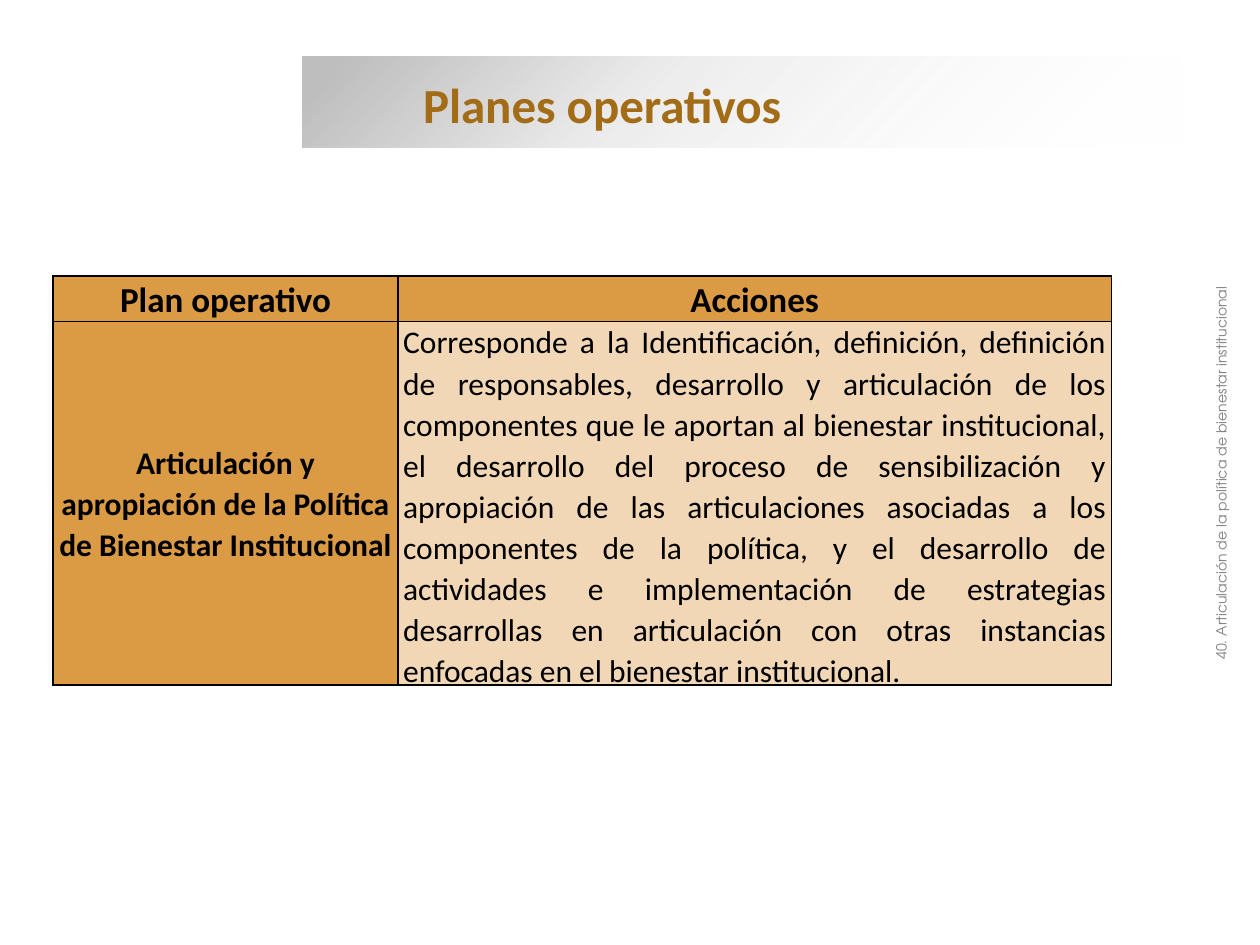
import pptx
import pptx.util
import pptx.dml.color
import pptx.enum.shapes
import pptx.enum.text
import pptx.oxml
import pptx.oxml.ns
from pptx.util import Inches

ALIGN = pptx.enum.text.PP_ALIGN
MIDDLE = pptx.enum.text.MSO_ANCHOR.MIDDLE
DRAWING_NS = pptx.oxml.ns.nsdecls("a")

GOLD, SAND, BLACK = "DB9B45", "F1D7B5", "000000"
PLAN = "Articulación y apropiación de la Política de Bienestar Institucional"
ACTIONS = (
    "Corresponde a la Identificación, definición, definición de responsables, "
    "desarrollo y articulación de los componentes que le aportan al bienestar "
    "institucional, el desarrollo del proceso de sensibilización y apropiación "
    "de las articulaciones asociadas a los componentes de la política, y el "
    "desarrollo de actividades e implementación de estrategias desarrollas en "
    "articulación con otras instancias enfocadas en el bienestar institucional."
)


def rgb(color):
    return pptx.dml.color.RGBColor.from_string(color)


def write_text(frame, text, size, color=BLACK, font="Calibri", bold=False,
               align=ALIGN.LEFT, spacing=None):
    frame.word_wrap = True
    paragraph = frame.paragraphs[0]
    paragraph.alignment = align
    paragraph.line_spacing = spacing
    run = paragraph.add_run()
    run.text = text
    run.font.name = font
    run.font.size = pptx.util.Pt(size)
    run.font.bold = bold
    run.font.color.rgb = rgb(color)


def add_label(shapes, box, text, anchor=pptx.enum.text.MSO_ANCHOR.TOP,
              rotation=0, **text_format):
    label = shapes.add_textbox(*map(Inches, box))
    label.rotation = rotation
    label.text_frame.vertical_anchor = anchor
    write_text(label.text_frame, text, **text_format)


def add_gradient_band(shapes, box, stops, angle):
    """Add a rectangle whose stops are (position %, colour, opacity %)."""
    band = shapes.add_shape(
        pptx.enum.shapes.MSO_SHAPE.RECTANGLE, *map(Inches, box))
    band.shadow.inherit = False
    band.line.fill.background()
    band.fill.gradient()
    band.fill.gradient_angle = 0
    gradient = band.fill._fill._gradFill
    gradient.find(pptx.oxml.ns.qn("a:lin")).set("ang", str(angle * 60000))
    stop_list = gradient.find(pptx.oxml.ns.qn("a:gsLst"))
    for old_stop in list(stop_list):
        stop_list.remove(old_stop)
    for position, color, opacity in stops:
        stop_list.append(pptx.oxml.parse_xml(
            f'<a:gs {DRAWING_NS} pos="{position * 1000}"><a:srgbClr val="{color}">'
            f'<a:alpha val="{opacity * 1000}"/></a:srgbClr></a:gs>'))


def set_borders(cell, color, width):
    properties = cell._tc.get_or_add_tcPr()
    for index, side in enumerate(("lnL", "lnR", "lnT", "lnB")):
        properties.insert(index, pptx.oxml.parse_xml(
            f'<a:{side} {DRAWING_NS} w="{pptx.util.Pt(width)}"><a:solidFill>'
            f'<a:srgbClr val="{color}"/></a:solidFill></a:{side}>'))


def fill_cell(cell, text, fill, **text_format):
    cell.vertical_anchor = MIDDLE
    cell.margin_left = cell.margin_right = Inches(0.04)
    cell.margin_top = cell.margin_bottom = 0
    cell.fill.solid()
    cell.fill.fore_color.rgb = rgb(fill)
    set_borders(cell, BLACK, 1)
    write_text(cell.text_frame, text, spacing=1.07, **text_format)


def add_plan_table(shapes):
    widths, heights = (2.74, 5.66), (0.36, 2.87)
    table = shapes.add_table(
        2, 2, Inches(0.42), Inches(2.19),
        Inches(sum(widths)), Inches(sum(heights))).table
    for column, width in zip(table.columns, widths):
        column.width = Inches(width)
    for row, height in zip(table.rows, heights):
        row.height = Inches(height)

    heading = dict(fill=GOLD, bold=True, align=ALIGN.CENTER)
    fill_cell(table.cell(0, 0), "Plan operativo", size=20, **heading)
    fill_cell(table.cell(0, 1), "Acciones", size=20, **heading)
    fill_cell(table.cell(1, 0), PLAN, size=18, **heading)
    fill_cell(table.cell(1, 1), ACTIONS, size=18, fill=SAND, align=ALIGN.JUSTIFY)


def main():
    presentation = pptx.Presentation()
    presentation.slide_width = Inches(10)
    presentation.slide_height = Inches(7.5)
    slide = presentation.slides.add_slide(presentation.slide_layouts[6])

    header = slide.shapes.add_group_shape().shapes
    add_gradient_band(
        header, (2.4, 0.45, 6.98, 0.72),
        [(5, "BFBFBF", 100), (37, "BFBFBF", 31), (100, "FFFFFF", 0)], angle=45)
    add_label(header, (3.26, 0.54, 6.2, 0.57), "Planes operativos",
              anchor=MIDDLE, size=28, color="A26D16", bold=True)
    add_label(slide.shapes, (7.34, 3.57, 4.84, 0.37),
              "40. Articulación de la política de bienestar institucional",
              rotation=270, size=8, color="808080",
              font="TeX Gyre Adventor", align=ALIGN.CENTER)
    add_plan_table(slide.shapes)

    presentation.save("out.pptx")


if __name__ == "__main__":
    main()
